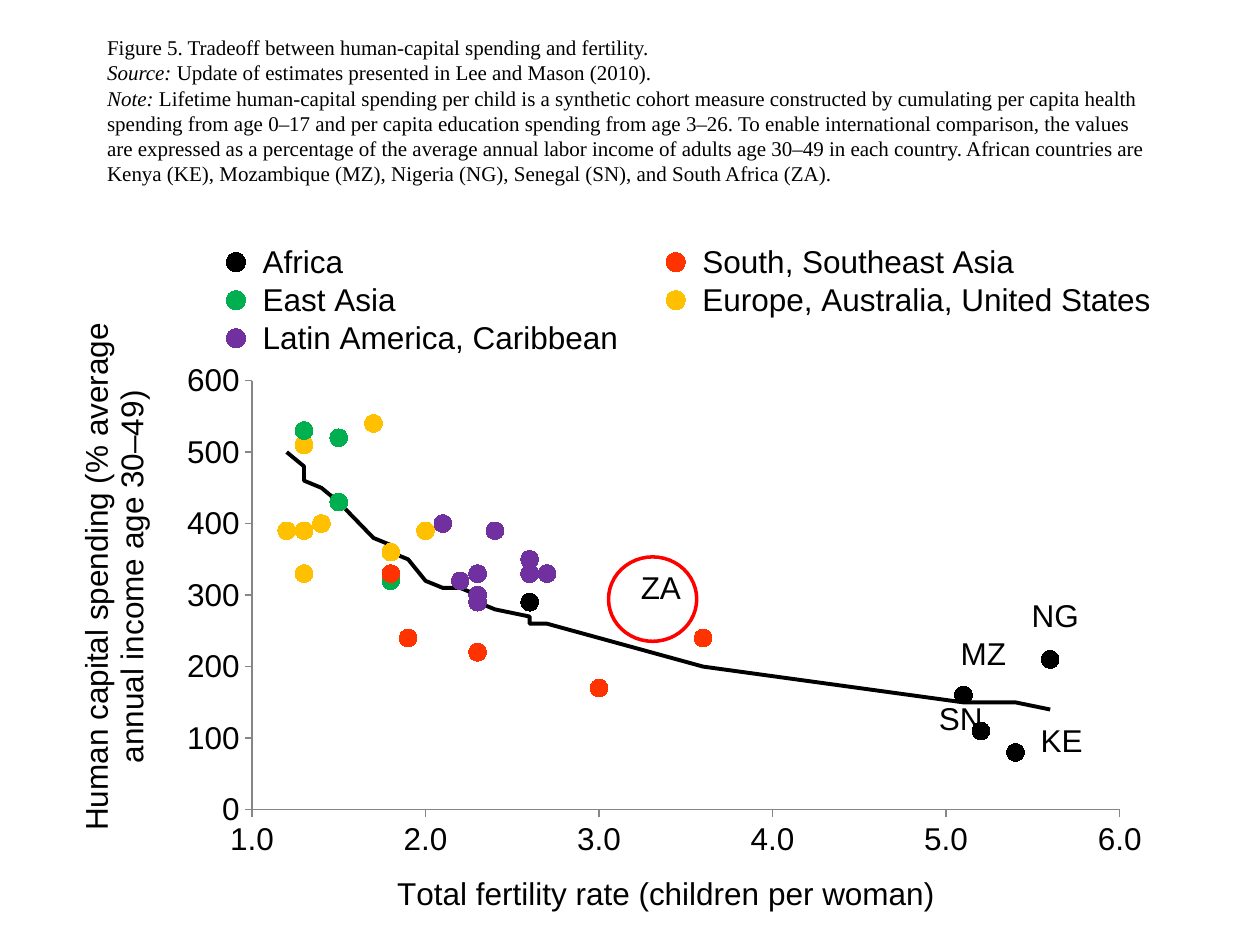
"""Build a slide with a scatter chart of human-capital spending against fertility."""
from lxml.etree import SubElement
from pptx import Presentation
from pptx.chart.data import XyChartData
from pptx.dml.color import RGBColor
from pptx.enum.chart import XL_CHART_TYPE as ChartType, XL_LEGEND_POSITION as LegendPosition
from pptx.enum.chart import XL_MARKER_STYLE as MarkerStyle, XL_TICK_MARK as TickMark
from pptx.enum.shapes import MSO_SHAPE as ShapeType
from pptx.enum.text import MSO_ANCHOR as Anchor, PP_ALIGN as Align
from pptx.oxml import parse_xml
from pptx.oxml.ns import nsdecls, qn
from pptx.util import Inches, Pt

CAPTION = [
    [("Figure 5. Tradeoff between human-capital spending and fertility.", False)],
    [("Source:", True), (" Update of estimates presented in Lee and Mason (2010).", False)],
    [("Note:", True),
     (" Lifetime human-capital spending per child is a synthetic cohort measure constructed by "
      "cumulating per capita health spending from age 0–17 and per capita education spending from "
      "age 3–26. To enable international comparison, the values are expressed as a percentage of "
      "the average annual labor income of adults age 30–49 in each country. African countries are "
      "Kenya (KE), Mozambique (MZ), Nigeria (NG), Senegal (SN), and South Africa (ZA).", False)],
]
AFRICA, SOUTH, EAST, WEST, LATIN = REGIONS = [
    ("Africa", "000000"),
    ("South, Southeast Asia", "FF3300"),
    ("East Asia", "00B050"),
    ("Europe, Australia, United States", "FFC000"),
    ("Latin America, Caribbean", "7030A0"),
]
FERTILITY_REGION_SPENDING_TREND = [
    (1.2, WEST, 390, 500), (1.3, WEST, 510, 480), (1.3, EAST, 530, 480),
    (1.3, WEST, 390, 470), (1.3, WEST, 330, 460), (1.4, WEST, 400, 450),
    (1.5, EAST, 520, 430), (1.5, EAST, 430, 430), (1.7, WEST, 540, 380),
    (1.8, EAST, 320, 370), (1.8, WEST, 360, 360), (1.8, WEST, 360, 360),
    (1.8, SOUTH, 330, 360), (1.8, WEST, 360, 360), (1.9, SOUTH, 240, 350),
    (2, WEST, 390, 320), (2.1, LATIN, 400, 310), (2.2, LATIN, 320, 310),
    (2.3, LATIN, 290, 300), (2.3, LATIN, 300, 300), (2.3, SOUTH, 220, 300),
    (2.3, LATIN, 330, 290), (2.4, LATIN, 390, 280), (2.6, LATIN, 350, 270),
    (2.6, AFRICA, 290, 260), (2.6, LATIN, 330, 260), (2.7, LATIN, 330, 260),
    (3, SOUTH, 170, 240), (3.6, SOUTH, 240, 200), (5.1, AFRICA, 160, 150),
    (5.2, AFRICA, 110, 150), (5.4, AFRICA, 80, 150), (5.6, AFRICA, 210, 140),
]
COUNTRIES = [("NG", 8.03, 4.68), ("ZA", 4.9, 4.46), ("MZ", 7.46, 4.98),
             ("SN", 7.28, 5.5), ("KE", 8.08, 5.67)]
X_TITLE = "Total fertility rate (children per woman)"
Y_TITLE = "Human capital spending (% average annual income age 30–49)"


def color(hex_text):
    return RGBColor.from_string(hex_text)


def style_font(font, size, name):
    font.size, font.name, font.bold = Pt(size), name, False
    font.color.rgb = color("000000")


def place(element, **values):
    """Give a chart part a manual layout in fractions of the chart."""
    layout = parse_xml(f"<c:layout {nsdecls('c')}/>")
    manual = SubElement(layout, qn("c:manualLayout"))
    if element.tag == qn("c:plotArea"):
        SubElement(manual, qn("c:layoutTarget")).set("val", "inner")
    for key in ("x", "y"):
        SubElement(manual, qn(f"c:{key}Mode")).set("val", "edge")
    for key, value in values.items():
        SubElement(manual, qn(f"c:{key}")).set("val", str(value))
    former = element.find(qn("c:layout"))
    if former is not None:
        element.remove(former)
    overlay = element.find(qn("c:overlay"))
    if overlay is not None:
        overlay.addprevious(layout)
    else:
        element.insert(0, layout)


def add_caption(slide):
    title = slide.shapes.title
    title.left, title.top, title.width, title.height = map(Inches, (0.75, 0, 8.5, 1.75))
    frame = title.text_frame
    frame.word_wrap, frame.vertical_anchor = True, Anchor.MIDDLE
    paragraph = frame.paragraphs[0]
    paragraph.alignment = Align.LEFT
    for index, line in enumerate(CAPTION):
        if index:
            paragraph.add_line_break()
        for text, italic in line:
            run = paragraph.add_run()
            run.text = text
            style_font(run.font, 12, "Times New Roman")
            run.font.italic = italic


def style_axis(axis, title, low, high, step, number_format, x, y):
    axis.minimum_scale, axis.maximum_scale, axis.major_unit = low, high, step
    axis.has_major_gridlines = False
    axis.major_tick_mark, axis.minor_tick_mark = TickMark.OUTSIDE, TickMark.NONE
    axis.tick_labels.number_format = number_format
    axis.tick_labels.number_format_is_linked = False
    axis.format.line.color.rgb = color("868686")
    axis.format.line.width = Pt(0.75)
    run = axis.axis_title.text_frame.paragraphs[0].add_run()
    run.text = title
    style_font(run.font, 18, "Arial")
    place(axis.axis_title._element, x=x, y=y)


def chart_data():
    data = XyChartData()
    for region in REGIONS:
        series = data.add_series(region[0])
        for fertility, owner, spending, _ in FERTILITY_REGION_SPENDING_TREND:
            series.add_data_point(fertility, spending if owner == region else None)
    series = data.add_series("Series 6")
    for fertility, _, _, trend in FERTILITY_REGION_SPENDING_TREND:
        series.add_data_point(fertility, trend)
    return data


def drop_empty_points(chart):
    for point in list(chart._chartSpace.iter(qn("c:pt"))):
        if point.findtext(qn("c:v")) in ("None", "", None):
            point.getparent().remove(point)


def add_scatter(slide):
    chart = slide.shapes.add_chart(
        ChartType.XY_SCATTER, *map(Inches, (0.08, 1.92, 9.46, 5.45)), chart_data()).chart
    drop_empty_points(chart)
    style_font(chart.font, 18, "Arial")
    chart.has_title = False
    plot = chart.plots[0]
    plot.vary_by_categories = False
    *regions, trend = plot.series
    for series, (_, fill) in zip(regions, REGIONS):
        series.smooth = False
        series.format.line.fill.background()
        marker = series.marker
        marker.style, marker.size = MarkerStyle.CIRCLE, 10
        marker.format.fill.solid()
        marker.format.fill.fore_color.rgb = color(fill)
        marker.format.line.color.rgb = color(fill)
    trend.smooth = False
    trend.marker.style = MarkerStyle.NONE
    trend.format.line.color.rgb = color("000000")
    trend.format.line.width = Pt(2.25)

    style_axis(chart.category_axis, X_TITLE, 1, 6, 1, "0.0", 0.32, 0.91)
    style_axis(chart.value_axis, Y_TITLE, 0, 600, 100, "0", 0.05, 0.11)
    place(chart._chartSpace.chart.plotArea, x=0.203, y=0.202, w=0.728, h=0.625)
    chart.has_legend = True
    legend = chart.legend
    legend.position, legend.include_in_layout = LegendPosition.TOP, False
    style_font(legend.font, 18, "Arial")
    place(legend._element, x=0.15, y=0, w=0.83, h=0.17)
    entry = parse_xml(f'<c:legendEntry {nsdecls("c")}><c:idx val="{len(REGIONS)}"/>'
                      '<c:delete val="1"/></c:legendEntry>')
    legend._element.find(qn("c:legendPos")).addnext(entry)


def add_country_labels(slide):
    for code, left, top in COUNTRIES:
        frame = slide.shapes.add_textbox(*map(Inches, (left, top, 0.69, 0.4))).text_frame
        frame.word_wrap = True
        paragraph = frame.paragraphs[0]
        paragraph.alignment = Align.CENTER
        run = paragraph.add_run()
        run.text = code
        style_font(run.font, 18, "Arial")


def add_highlight(slide):
    ring = slide.shapes.add_shape(ShapeType.OVAL, *map(Inches, (4.83, 4.42, 0.7, 0.67)))
    ring.shadow.inherit = False
    ring.fill.background()
    ring.line.color.rgb = color("FF0000")
    ring.line.width = Pt(2)


def main():
    presentation = Presentation()
    presentation.slide_width, presentation.slide_height = Inches(10), Inches(7.5)
    slide = presentation.slides.add_slide(presentation.slide_layouts[5])
    add_caption(slide)
    add_scatter(slide)
    add_country_labels(slide)
    add_highlight(slide)
    presentation.save("out.pptx")


if __name__ == "__main__":
    main()
